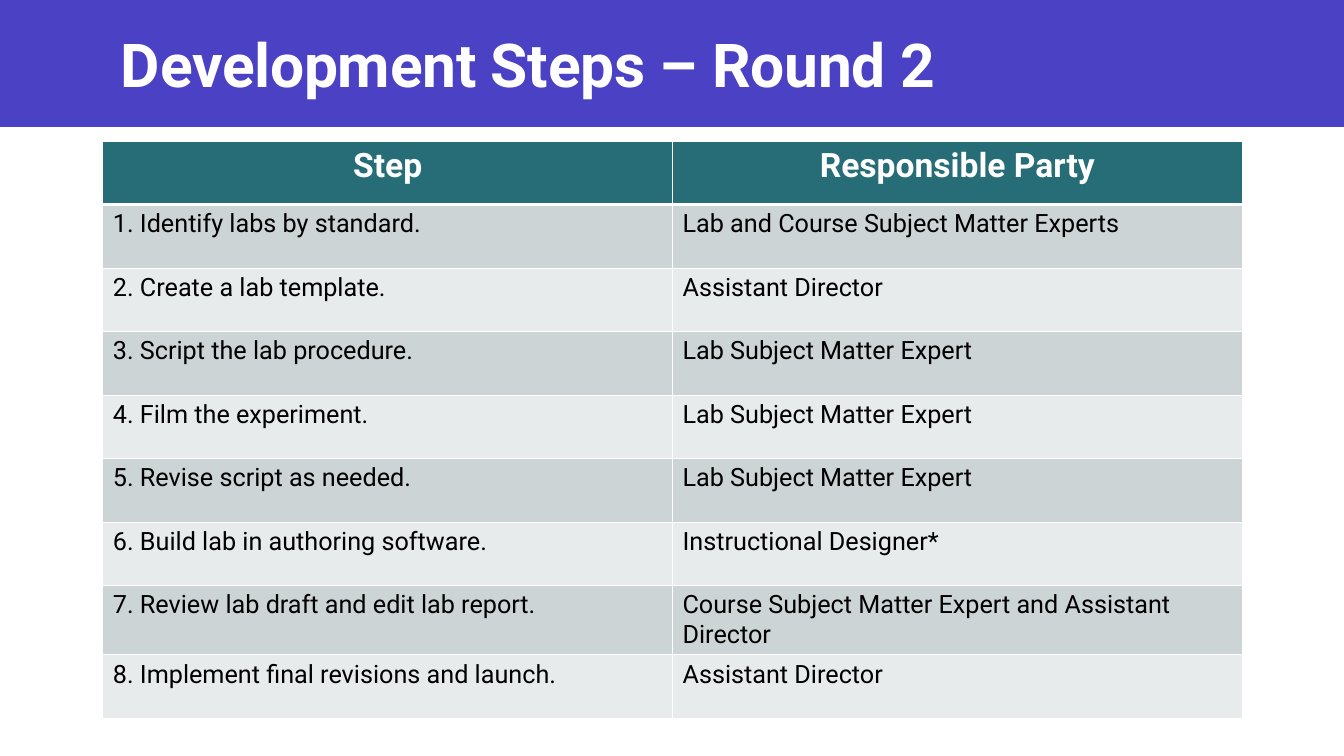
"""Build the slide listing the development steps of round 2 and who is responsible."""
from lxml.etree import SubElement
from pptx import Presentation
from pptx.dml.color import RGBColor
from pptx.enum.shapes import MSO_SHAPE
from pptx.enum.text import MSO_ANCHOR, MSO_AUTO_SIZE, PP_ALIGN
from pptx.oxml.ns import qn
from pptx.util import Inches, Pt

FONT = "Roboto"
WHITE = "FFFFFF"
BAND_FILL = "4A41C5"
HEADER_FILL = "276D77"
ROW_FILLS = ["E8EBEC", "CDD4D6"]
ROW_HEIGHT = Inches(0.63)
COLUMN_WIDTH = Inches(5.65)

STEPS = [
    ("Step", "Responsible Party"),
    ("1. Identify labs by standard.", "Lab and Course Subject Matter Experts"),
    ("2. Create a lab template.", "Assistant Director"),
    ("3. Script the lab procedure.", "Lab Subject Matter Expert"),
    ("4. Film the experiment.", "Lab Subject Matter Expert"),
    ("5. Revise script as needed.", "Lab Subject Matter Expert"),
    ("6. Build lab in authoring software.", "Instructional Designer*"),
    ("7. Review lab draft and edit lab report.",
     "Course Subject Matter Expert and Assistant Director"),
    ("8. Implement final revisions and launch.", "Assistant Director"),
]


def style_text(para, size, color, bold):
    for span in para.runs:
        span.font.name = FONT
        span.font.size = Pt(size)
        span.font.bold = bold
        span.font.color.rgb = RGBColor.from_string(color)


def add_border(cell, side, width):
    line = SubElement(cell._tc.get_or_add_tcPr(), qn(f"a:ln{side}"), w=str(Pt(width)))
    SubElement(SubElement(line, qn("a:solidFill")), qn("a:srgbClr"), val=WHITE)


deck = Presentation()
deck.slide_width = Inches(13.33)
deck.slide_height = Inches(7.5)
page = deck.slides.add_slide(deck.slide_layouts[5])

title = page.shapes.title
band = page.shapes.add_shape(MSO_SHAPE.RECTANGLE, 0, 0, deck.slide_width, Inches(1.26))
band.shadow.inherit = False
band.fill.solid()
band.fill.fore_color.rgb = RGBColor.from_string(BAND_FILL)
band.line.fill.background()
title.element.addprevious(band.element)

title.left, title.top = Inches(1.1), Inches(0.21)
title.width, title.height = Inches(10.3), Inches(0.84)
title.text_frame.text = "Development Steps – Round 2"
title.text_frame.vertical_anchor = MSO_ANCHOR.MIDDLE
title.text_frame.auto_size = MSO_AUTO_SIZE.NONE
heading = title.text_frame.paragraphs[0]
heading.alignment = PP_ALIGN.LEFT
style_text(heading, 43.2, WHITE, True)
heading.runs[0].font._element.set("spc", "-20")

table = page.shapes.add_table(
    len(STEPS), 2, Inches(1.02), Inches(1.4), 2 * COLUMN_WIDTH, len(STEPS) * ROW_HEIGHT
).table
for column in table.columns:
    column.width = COLUMN_WIDTH

for row, texts in enumerate(STEPS):
    table.rows[row].height = ROW_HEIGHT
    is_header = row == 0
    for column, text in enumerate(texts):
        cell = table.cell(row, column)
        cell.text_frame.text = text
        para = cell.text_frame.paragraphs[0]
        if is_header:
            para.alignment = PP_ALIGN.CENTER
            style_text(para, 24, WHITE, True)
        else:
            style_text(para, 18, "000000", False)
        for side in "LRTB":
            under_header = (row, side) in [(0, "B"), (1, "T")]
            add_border(cell, side, 3 if under_header else 1)
        cell.fill.solid()
        fill = HEADER_FILL if is_header else ROW_FILLS[row % 2]
        cell.fill.fore_color.rgb = RGBColor.from_string(fill)

deck.save("out.pptx")
